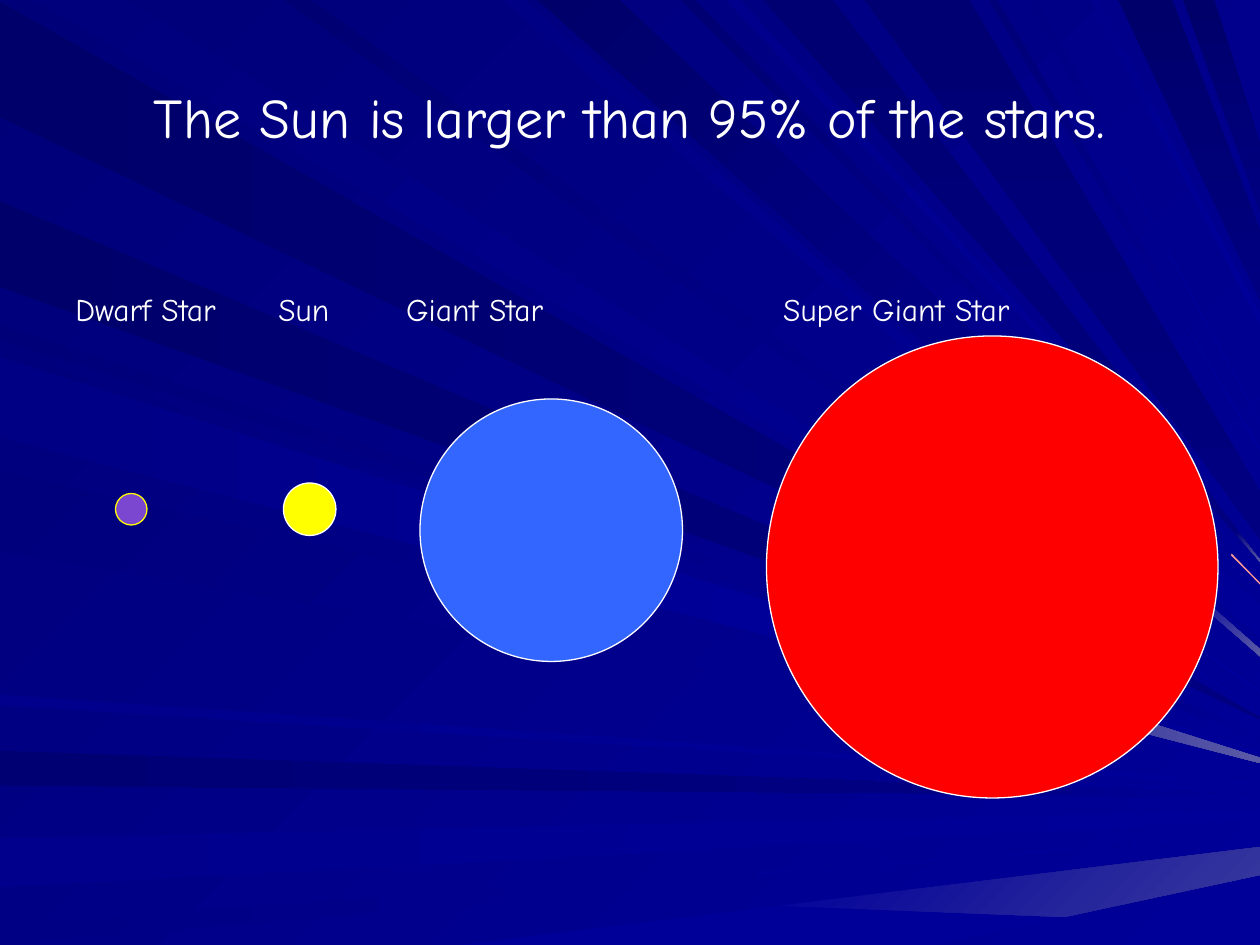
"""Build a slide comparing the Sun with other kinds of star on a rayed blue background."""
from typing import NamedTuple, Optional

from lxml.etree import SubElement
from pptx import Presentation
from pptx.dml.color import RGBColor as RGB
from pptx.dml.fill import FillFormat
from pptx.enum.shapes import MSO_SHAPE as SHAPE
from pptx.enum.text import MSO_ANCHOR as ANCHOR, PP_ALIGN as ALIGN
from pptx.oxml.ns import qn
from pptx.slide import Slide
from pptx.text.text import _Paragraph as Paragraph
from pptx.util import Pt

WIDTH, HEIGHT = 720, 540
FONT = "Comic Neue"
COLORS = {
    "white": "FFFFFF", "yellow": "FFFF00", "violet": "7B46D0", "azure": "3366FF",
    "red": "FF0000", "pink": "FF9999", "glow": "5A5AA6", "haze": "39399E",
    "deep": "00006B", "dusk": "000073", "sky": "000078", "dawn": "00007D",
    "navy": "000080", "mid": "000085", "bright": "00008D", "blue": "000099",
}
Point = tuple[float, float]


class Ray(NamedTuple):
    """A wedge from a span on one slide edge to a span on the right edge."""
    edge: str
    span: Point
    end: Point
    start: str
    finish: str = "blue"
    angle: int = 45
    joint: float = 1
    tail: str = "blue"


class Star(NamedTuple):
    """A star disc and its colours."""
    left: float
    top: float
    width: float
    height: float
    fill: str
    outline: str = "white"


RAYS = [
    Ray("left", (1, 67), (410, 411), "deep", "navy", 0),
    Ray("top", (19, 73), (406, 405), "dawn"),
    Ray("left", (429, 449), (454, 455), "dusk", "navy", 0, 0.7),
    Ray("left", (479, 507), (463, 469), "bright", angle=0),
    Ray("left", (529, 545), (476, 477), "mid", angle=0),
    Ray("bottom", (262, 534), (484, 500), "blue", joint=0.4, tail="haze"),
    Ray("left", (186, 194), (423, 424), "sky"),
    Ray("left", (115, 164), (420, 421), "deep", "navy", 0, 0.87),
    Ray("top", (287, 300), (375, 371), "mid", joint=0.9, tail="glow"),
    Ray("top", (307, 354), (365, 345), "deep"),
    Ray("top", (389, 397), (334, 333), "dusk", joint=0.95, tail="pink"),
    Ray("top", (436, 476), (321, 320), "dusk", "navy", 90, 0.95, "glow"),
    Ray("top", (639, 670), (171, 132), "deep", "navy", 90),
    Ray("top", (676, 694), (120, 82), "deep", "navy", 90),
    Ray("left", (200, 246), (429, 433), "dawn"),
    Ray("left", (269, 315), (435, 436), "dawn"),
    Ray("left", (397, 403), (447, 449), "bright", angle=0),
    Ray("top", (162, 178), (397, 394), "dusk"),
    Ray("top", (415, 423), (327, 326), "bright"),
    Ray("top", (494, 554), (308, 281), "dusk", "navy", 90),
    Ray("top", (565, 570), (259, 255), "sky"),
    Ray("top", (587, 593), (242, 241), "mid"),
    Ray("top", (623, 628), (186, 179), "bright"),
    Ray("left", (204, 250), (433, 436), "mid", "blue", 0, 0.63, "glow"),
]
STARS = [
    Star(66, 282, 18, 18, "violet", "yellow"),
    Star(240, 228, 150, 150, "azure"),
    Star(438, 192, 258, 264, "red"),
    Star(162, 276, 30, 30, "yellow"),
]
LABELS = ["Dwarf Star", "Sun", "Giant Star", "Super Giant Star"]
LABEL_TABS = [116, 189, 404.5]


def rgb(name: str) -> RGB:
    """Look up a named colour."""
    return RGB.from_string(COLORS[name])


def paint(fill: FillFormat, start: str, end: Optional[str] = None, angle: int = 0) -> None:
    """Apply a solid fill, or a gradient turned clockwise by the angle."""
    if end in (None, start):
        fill.solid()
        fill.fore_color.rgb = rgb(start)
        return
    fill.gradient()
    fill.gradient_angle = -angle % 360
    for stop, name in zip(fill.gradient_stops, (start, end)):
        stop.color.rgb = rgb(name)


def edge_point(edge: str, offset: float) -> Point:
    """Locate an offset along the left, top or bottom edge."""
    return {"left": (0, offset), "top": (offset, 0), "bottom": (offset, HEIGHT)}[edge]


def between(a: Point, b: Point, t: float) -> Point:
    """Interpolate between two points."""
    return a[0] + (b[0] - a[0]) * t, a[1] + (b[1] - a[1]) * t


def draw_polygon(s: Slide, points: list[Point], start: str, end: str, angle: int) -> None:
    """Draw a borderless polygon, kept within the slide height."""
    first, *rest = [(Pt(x), Pt(min(y, HEIGHT))) for x, y in points]
    builder = s.shapes.build_freeform(*first)
    builder.add_line_segments(rest, close=True)
    sp = builder.convert_to_shape()
    sp.shadow.inherit = False
    sp.line.fill.background()
    paint(sp.fill, start, end, angle)


def draw_ray(s: Slide, ray: Ray) -> None:
    """Draw one ray, and its tail beyond the joint if it has one."""
    a, b = [edge_point(ray.edge, offset) for offset in ray.span]
    c, d = [(WIDTH, y) for y in ray.end]
    e, f = between(a, c, ray.joint), between(b, d, ray.joint)
    draw_polygon(s, [a, e, f, b], ray.start, ray.finish, ray.angle)
    if ray.joint < 1:
        tail_start = "pink" if ray.tail == "pink" else ray.finish
        draw_polygon(s, [e, c, d, f], tail_start, ray.tail, ray.angle)


def draw_star(s: Slide, star: Star) -> None:
    """Draw one star as an outlined disc."""
    sp = s.shapes.add_shape(SHAPE.OVAL, *map(Pt, star[:4]))
    sp.shadow.inherit = False
    paint(sp.fill, star.fill)
    sp.line.color.rgb = rgb(star.outline)
    sp.line.width = Pt(0.75)


def style(p: Paragraph, size: float) -> None:
    """Set the font of a paragraph."""
    p.font.name = FONT
    p.font.size = Pt(size)
    p.font.color.rgb = rgb("white")


def add_title(s: Slide, text: str) -> None:
    """Fill the title placeholder and raise it above the rays."""
    sp = s.shapes.title
    s.shapes._spTree.append(sp._element)
    sp.left, sp.top, sp.width, sp.height = Pt(36), Pt(21.6), Pt(648), Pt(90)
    tf = sp.text_frame
    tf.text = text
    tf.vertical_anchor = ANCHOR.MIDDLE
    p = tf.paragraphs[0]
    p.alignment = ALIGN.CENTER
    style(p, 32)


def add_labels(s: Slide) -> None:
    """Write the star names on one line, spaced by tab stops."""
    tf = s.shapes.add_textbox(Pt(36), Pt(162), Pt(648), Pt(302.4)).text_frame
    tf.word_wrap = True
    p = tf.paragraphs[0]
    p.text = "\t".join(LABELS)
    tabs = SubElement(p._p.get_or_add_pPr(), qn("a:tabLst"))
    for pos in LABEL_TABS:
        SubElement(tabs, qn("a:tab"), pos=str(Pt(pos)), algn="l")
    style(p, 18)


def main() -> None:
    """Build and save the slide."""
    prs = Presentation()
    prs.slide_width, prs.slide_height = Pt(WIDTH), Pt(HEIGHT)
    s = prs.slides.add_slide(prs.slide_layouts[5])
    paint(s.background.fill, "sky", "blue", 45)
    for ray in RAYS:
        draw_ray(s, ray)
    add_title(s, "The Sun is larger than 95% of the stars.")
    add_labels(s)
    for star in STARS:
        draw_star(s, star)
    prs.save("out.pptx")


if __name__ == "__main__":
    main()
